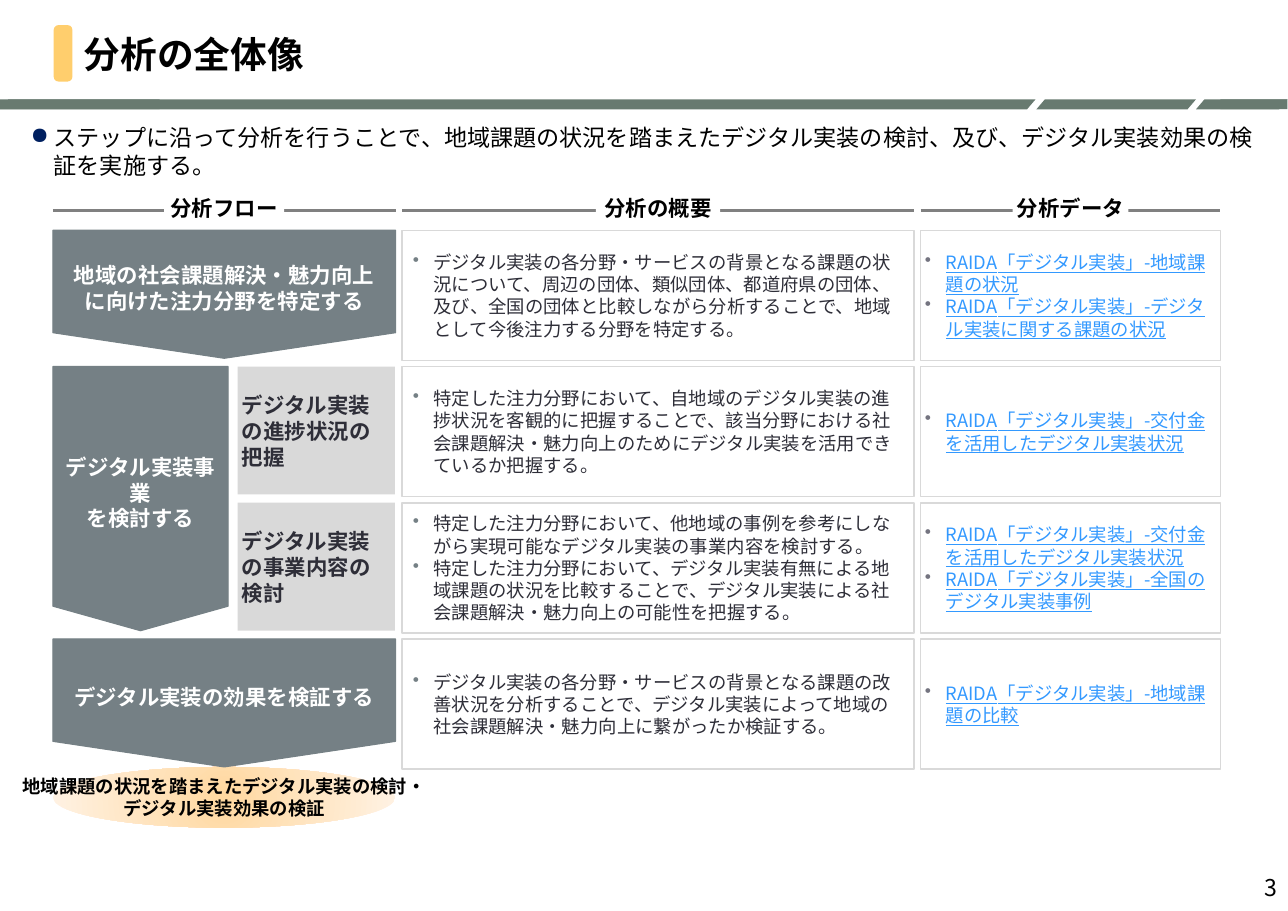
from lxml.etree import SubElement
from pptx import Presentation
from pptx.dml.color import RGBColor
from pptx.enum.shapes import MSO_CONNECTOR, MSO_SHAPE
from pptx.enum.text import MSO_ANCHOR, PP_ALIGN
from pptx.oxml.ns import qn
from pptx.util import Cm, Pt

FONT = "Noto Sans CJK JP"
BLACK = RGBColor(0x00, 0x00, 0x00)
WHITE = RGBColor(0xFF, 0xFF, 0xFF)
GREEN = RGBColor(0x68, 0x7A, 0x70)
YELLOW = RGBColor(0xFF, 0xCE, 0x6D)
SLATE = RGBColor(0x75, 0x80, 0x85)
GRAY = RGBColor(0x80, 0x80, 0x80)
BULLET_GRAY = RGBColor(0x74, 0x74, 0x80)
LIGHT = RGBColor(0xD9, 0xD9, 0xD9)
INK = RGBColor(0x2E, 0x2E, 0x38)
LINK = RGBColor(0x33, 0x99, 0xFF)
NAVY = RGBColor(0x00, 0x20, 0x60)
PEACH = RGBColor(0xFF, 0xD8, 0xA0)
CREAM = RGBColor(0xFF, 0xF2, 0xE3)

prs = Presentation()
prs.slide_width, prs.slide_height = Cm(29.7), Cm(21)
slide = prs.slides.add_slide(prs.slide_layouts[5])
shapes = slide.shapes


def add_box(kind, x, y, w, h, fill, line=None, weight=1):
    sp = shapes.add_shape(kind, Cm(x), Cm(y), Cm(w), Cm(h))
    sp.shadow.inherit = False
    sp.fill.solid()
    sp.fill.fore_color.rgb = fill
    if line is None:
        sp.line.fill.background()
    else:
        sp.line.color.rgb = line
        sp.line.width = Pt(weight)
    return sp


def write(sp, lines, size, color, bold=False, align=PP_ALIGN.LEFT, anchor=MSO_ANCHOR.MIDDLE,
          inset=(0.25, 0.13), bullet=None, underline=False):
    """Fill a shape with paragraphs; bullet is (character, colour, indent in cm)."""
    tf = sp.text_frame
    tf.word_wrap = True
    tf.vertical_anchor = anchor
    tf.margin_left = tf.margin_right = Cm(inset[0])
    tf.margin_top = tf.margin_bottom = Cm(inset[1])
    tf.text = "\n".join(lines)
    for p in tf.paragraphs:
        if bullet:
            char, bullet_color, indent = bullet
            pPr = p._p.get_or_add_pPr()
            pPr.set("marL", str(Cm(indent)))
            pPr.set("indent", str(-Cm(indent)))
            SubElement(SubElement(pPr, qn("a:buClr")), qn("a:srgbClr"), val=str(bullet_color))
            SubElement(pPr, qn("a:buChar"), char=char)
        p.alignment = align
        p.line_spacing = Pt(round(size * 1.21, 1))
        for r in p.runs:
            r.font.size = Pt(size)
            r.font.bold = bold
            r.font.underline = underline
            r.font.color.rgb = color
            r.font.name = FONT
            SubElement(r._r.get_or_add_rPr(), qn("a:ea"), typeface=FONT)


# Header band and title
for x, w in [(0, 23.88), (23.9, 3.68), (27.58, 2.11)]:
    band = add_box(MSO_SHAPE.PARALLELOGRAM, x, 2.29, w, 0.23, GREEN)
    band.adjustments[0] = 0.85
for x, w in [(0, 3.68), (28.14, 1.55)]:
    add_box(MSO_SHAPE.RECTANGLE, x, 2.29, w, 0.23, GREEN)
accent = add_box(MSO_SHAPE.ROUNDED_RECTANGLE, 1.24, 0.58, 0.43, 1.3, YELLOW)
accent.adjustments[0] = 0.25

title = shapes.title
title.left, title.top, title.width, title.height = Cm(1.68), Cm(0.58), Cm(27.3), Cm(1.3)
write(title, ["分析の全体像"], 24, BLACK, bold=True)

lead = shapes.add_textbox(Cm(0.61), Cm(2.74), Cm(28.5), Cm(1.5))
write(lead, ["ステップに沿って分析を行うことで、地域課題の状況を踏まえたデジタル実装の検討、"
             "及び、デジタル実装効果の検証を実施する。"],
      15.1, BLACK, anchor=MSO_ANCHOR.TOP, inset=(0.1, 0.1), bullet=("●", NAVY, 0.53))

# Column headings
FLOW, OVERVIEW, DATA = (1.22, 7.9), (9.27, 11.81), (21.23, 6.91)
headings = [(FLOW, "分析フロー", 2.77), (OVERVIEW, "分析の概要", 2.87), (DATA, "分析データ", 2.67)]
for (x, w), text, label_w in headings:
    rule = shapes.add_connector(MSO_CONNECTOR.STRAIGHT, Cm(x), Cm(4.85), Cm(x + w), Cm(4.85))
    rule.line.color.rgb = GRAY
    rule.line.width = Pt(1.5)
    SubElement(rule._element.spPr, qn("a:effectLst"))
    label = add_box(MSO_SHAPE.RECTANGLE, x + (w - label_w) / 2, 4.5, label_w, 0.6, WHITE)
    write(label, [text], 14, BLACK, bold=True, align=PP_ALIGN.CENTER,
          anchor=MSO_ANCHOR.TOP, inset=(0, 0))

# Overview and data boxes, one row per step
TOP, PITCH, ROW_H, STEP_H = 5.31, 3.14, 3, 2.95
rows = [
    (["デジタル実装の各分野・サービスの背景となる課題の状況について、周辺の団体、類似団体、"
      "都道府県の団体、及び、全国の団体と比較しながら分析することで、"
      "地域として今後注力する分野を特定する。"],
     ["RAIDA「デジタル実装」-地域課題の状況",
      "RAIDA「デジタル実装」-デジタル実装に関する課題の状況"]),
    (["特定した注力分野において、自地域のデジタル実装の進捗状況を客観的に把握することで、"
      "該当分野における社会課題解決・魅力向上のためにデジタル実装を活用できているか把握する。"],
     ["RAIDA「デジタル実装」-交付金を活用したデジタル実装状況"]),
    (["特定した注力分野において、他地域の事例を参考にしながら実現可能な"
      "デジタル実装の事業内容を検討する。",
      "特定した注力分野において、デジタル実装有無による地域課題の状況を比較することで、"
      "デジタル実装による社会課題解決・魅力向上の可能性を把握する。"],
     ["RAIDA「デジタル実装」-交付金を活用したデジタル実装状況",
      "RAIDA「デジタル実装」-全国のデジタル実装事例"]),
    (["デジタル実装の各分野・サービスの背景となる課題の改善状況を分析することで、"
      "デジタル実装によって地域の社会課題解決・魅力向上に繋がったか検証する。"],
     ["RAIDA「デジタル実装」-地域課題の比較"]),
]
for i, (overview, data) in enumerate(rows):
    y = TOP + i * PITCH
    sp = add_box(MSO_SHAPE.RECTANGLE, OVERVIEW[0], y, OVERVIEW[1], ROW_H, WHITE, LIGHT)
    write(sp, overview, 12, INK, bullet=("•", SLATE, 0.48))
    sp = add_box(MSO_SHAPE.RECTANGLE, DATA[0], y, DATA[1], ROW_H, WHITE, LIGHT)
    write(sp, data, 12, LINK, inset=(0.1, 0.1), bullet=("•", BULLET_GRAY, 0.48), underline=True)

# Goal under the flow
goal = add_box(MSO_SHAPE.OVAL, FLOW[0], 17.68, FLOW[1], 1.4, PEACH)
goal.fill.gradient()
for stop, color in zip(goal.fill.gradient_stops, (PEACH, CREAM)):
    stop.color.rgb = color
grad = goal._element.spPr.find(qn("a:gradFill"))
grad.remove(grad.find(qn("a:lin")))
circle = SubElement(grad, qn("a:path"), path="circle")
SubElement(circle, qn("a:fillToRect"), l="50000", t="50000", r="50000", b="50000")
write(goal, ["地域課題の状況を踏まえたデジタル実装の検討・", "デジタル実装効果の検証"], 12, BLACK,
      bold=True, align=PP_ALIGN.CENTER, inset=(0, 0))
goal.text_frame.word_wrap = False

# Flow arrows: pentagons turned to point down, with upright text
arrows = [
    (0, FLOW[1], STEP_H, 0.2, ["地域の社会課題解決・魅力向上", "に向けた注力分野を特定する"]),
    (1, 4.04, PITCH + STEP_H, 0.14, ["デジタル実装事業", "を検討する"]),
    (3, FLOW[1], STEP_H, 0.2, ["デジタル実装の効果を検証する"]),
]
for row, w, h, tip, lines in arrows:
    x, y = FLOW[0] + (w - h) / 2, TOP + row * PITCH + (h - w) / 2
    arrow = add_box(MSO_SHAPE.PENTAGON, x, y, h, w, SLATE, SLATE, 0.75)
    arrow.adjustments[0] = tip
    arrow.rotation = 90
    write(arrow, lines, 14, WHITE, bold=True, align=PP_ALIGN.CENTER, inset=(0.3, 0.2))
    arrow.text_frame._txBody.bodyPr.set("vert", "vert270")

for row, text in [(1, "デジタル実装の進捗状況の把握"), (2, "デジタル実装の事業内容の検討")]:
    sp = add_box(MSO_SHAPE.RECTANGLE, 5.48, TOP + row * PITCH, 3.63, STEP_H, LIGHT)
    write(sp, [text], 14, INK, bold=True, inset=(0.1, 0.1))

page = shapes.add_textbox(Cm(22.81), Cm(19.88), Cm(6.89), Cm(1.12))
write(page, ["3"], 15.1, BLACK, align=PP_ALIGN.RIGHT)

prs.save("out.pptx")
